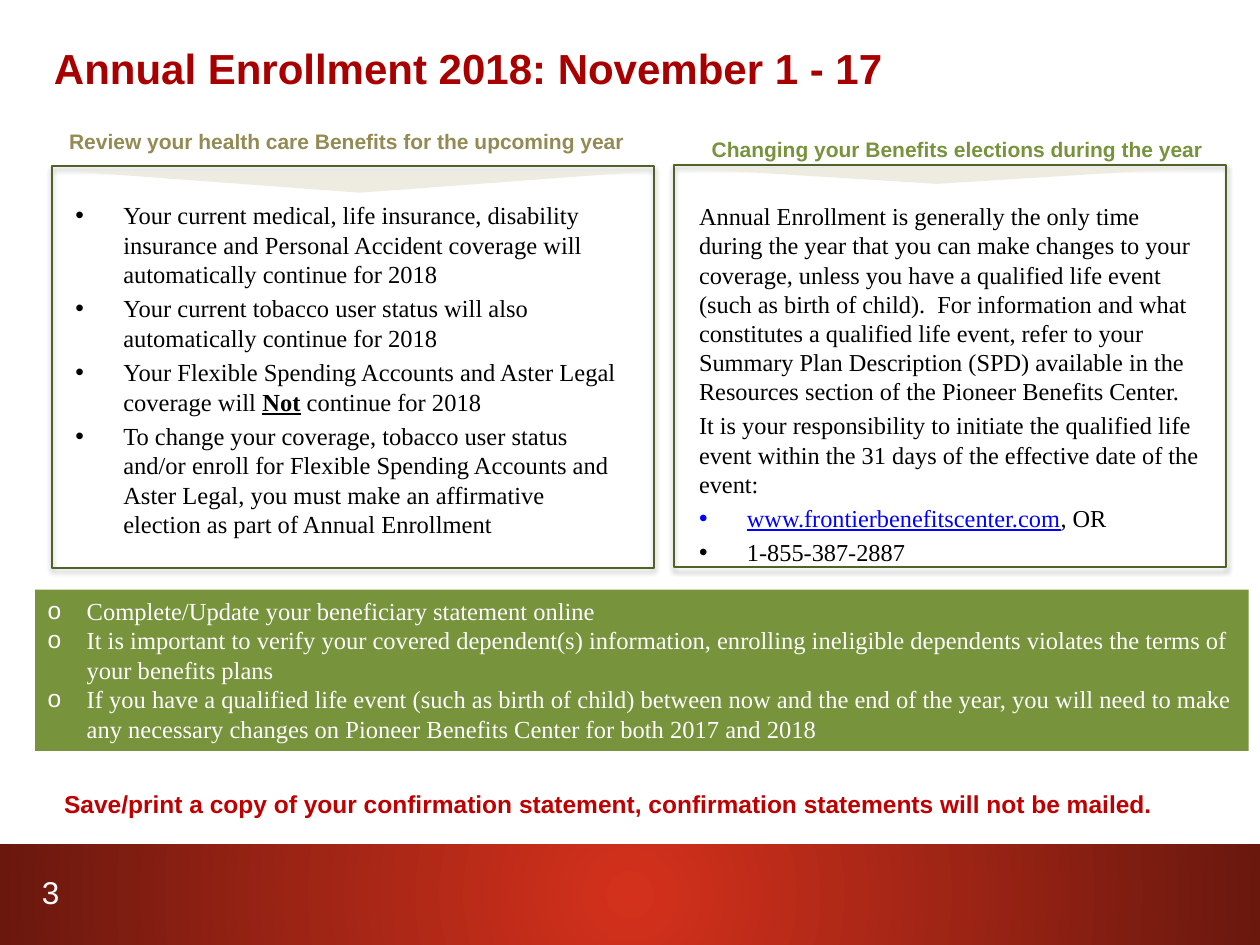
from lxml.etree import SubElement
from pptx import Presentation
from pptx.dml.color import RGBColor
from pptx.enum.shapes import MSO_SHAPE
from pptx.enum.text import MSO_ANCHOR, PP_ALIGN
from pptx.oxml import parse_xml
from pptx.oxml.ns import nsdecls, qn
from pptx.util import Inches, Pt

TITLE_RED = RGBColor(0xA8, 0x00, 0x00)
NOTICE_RED = RGBColor(0xC0, 0x00, 0x00)
TAN = RGBColor(0x94, 0x8A, 0x54)
GREEN = RGBColor(0x77, 0x93, 0x3C)
DARK_GREEN = RGBColor(0x4F, 0x62, 0x28)
CREAM = RGBColor(0xEE, 0xEC, 0xE1)
BLUE = RGBColor(0x00, 0x00, 0xFF)
BLACK = RGBColor(0x00, 0x00, 0x00)
WHITE = RGBColor(0xFF, 0xFF, 0xFF)
FOOTER_GRADIENT = f"""<a:gradFill {nsdecls('a')} rotWithShape="1"><a:gsLst>
<a:gs pos="0"><a:srgbClr val="D4311C"/></a:gs><a:gs pos="100000"><a:srgbClr val="6A180E"/></a:gs>
</a:gsLst><a:path path="circle"><a:fillToRect l="50000" t="50000" r="50000" b="50000"/></a:path></a:gradFill>"""
PANEL_SHADOW = f"""<a:effectLst {nsdecls('a')}><a:outerShdw blurRad="40000" dist="23000" dir="5400000" rotWithShape="0">
<a:srgbClr val="000000"><a:alpha val="35000"/></a:srgbClr></a:outerShdw></a:effectLst>"""


def add_block(shapes, kind, left, top, width, height):
    block = shapes.add_shape(kind, Inches(left), Inches(top), Inches(width), Inches(height))
    block.shadow.inherit = False
    block.line.fill.background()
    return block


def write(frame, paragraphs, font_name, size, color, bold=False, bullet=None, indent=0, gap=0):
    frame.text = "\n".join(paragraphs)
    for index, paragraph in enumerate(frame.paragraphs):
        paragraph.alignment = PP_ALIGN.LEFT
        paragraph.space_before = Pt(gap if index else 0)
        if bullet and index >= bullet[1]:
            properties = paragraph._p.get_or_add_pPr()
            properties.set("marL", str(Inches(indent)))
            properties.set("indent", str(-Inches(indent)))
            SubElement(properties, qn("a:buFont"), typeface="Arial")
            SubElement(properties, qn("a:buChar"), char=bullet[0])
        for run in paragraph.runs:
            run.font.name = font_name
            run.font.size = Pt(size)
            run.font.bold = bold
            run.font.color.rgb = color


presentation = Presentation()
presentation.slide_width = Inches(10)
presentation.slide_height = Inches(7.5)
slide = presentation.slides.add_slide(presentation.slide_layouts[6])
shapes = slide.shapes

footer = add_block(shapes, MSO_SHAPE.RECTANGLE, 0, 6.7, 10, 0.8)
footer.fill.background()
footer_properties = footer._element.spPr
footer_properties.replace(footer_properties.find(qn("a:noFill")), parse_xml(FOOTER_GRADIENT))

panels = [
    ((0.41, 1.32, 4.78, 3.19), (2.77, -0.85, 0.17, 4.59)),
    ((5.35, 1.31, 4.38, 3.19), (7.37, -0.69, 0.13, 4.17)),
]
for panel_box, pointer_box in panels:
    panel = add_block(shapes, MSO_SHAPE.RECTANGLE, *panel_box)
    panel.fill.background()
    panel.line.color.rgb = DARK_GREEN
    panel.line.width = Pt(1)
    panel_properties = panel._element.spPr
    panel_properties.replace(panel_properties.find(qn("a:effectLst")), parse_xml(PANEL_SHADOW))
    pointer = add_block(shapes, MSO_SHAPE.PENTAGON, *pointer_box)
    pointer.adjustments[0] = 1
    pointer.rotation = 90
    pointer.fill.solid()
    pointer.fill.fore_color.rgb = CREAM

labels = [
    ("Annual Enrollment 2018: November 1 - 17", (0.33, 0.14, 9, 0.79), 24, TITLE_RED, True, True),
    ("Review your health care Benefits for the upcoming year", (0.45, 0.92, 4.71, 0.4), 12, TAN, True, True),
    ("Changing your Benefits elections during the year", (5.55, 1.03, 4.19, 0.3), 12, GREEN, True, False),
    ("Save/print a copy of your confirmation statement, confirmation statements will not be mailed.",
     (0.41, 6.21, 8.88, 0.34), 14, NOTICE_RED, True, False),
    ("3", (0.16, 6.88, 0.41, 0.4), 18, WHITE, False, True),
]
for text, box, size, color, bold, wraps in labels:
    label = shapes.add_textbox(*map(Inches, box)).text_frame
    label.word_wrap = wraps
    label.vertical_anchor = MSO_ANCHOR.MIDDLE
    write(label, [text], "Arial", size, color, bold)
label.paragraphs[0].alignment = PP_ALIGN.RIGHT

review = shapes.add_textbox(Inches(0.5), Inches(1.54), Inches(4.59), Inches(2.91)).text_frame
review.word_wrap = True
write(review, [
    "Your current medical, life insurance, disability insurance and Personal Accident coverage will "
    "automatically continue for 2018",
    "Your current tobacco user status will also automatically continue for 2018",
    "Your Flexible Spending Accounts and Aster Legal coverage will ",
    "To change your coverage, tobacco user status and/or enroll for Flexible Spending Accounts and "
    "Aster Legal, you must make an affirmative election as part of Annual Enrollment",
], "Times New Roman", 14, BLACK, bullet=("•", 0), indent=0.38, gap=2.8)

changes = shapes.add_textbox(Inches(5.45), Inches(1.55), Inches(4.17), Inches(2.91)).text_frame
changes.word_wrap = True
write(changes, [
    "Annual Enrollment is generally the only time during the year that you can make changes to your "
    "coverage, unless you have a qualified life event (such as birth of child).  For information and "
    "what constitutes a qualified life event, refer to your Summary Plan Description (SPD) available "
    "in the Resources section of the Pioneer Benefits Center.",
    "It is your responsibility to initiate the qualified life event within the 31 days of the "
    "effective date of the event:",
    "www.frontierbenefitscenter.com",
    "1-855-387-2887",
], "Times New Roman", 13.9, BLACK, bullet=("•", 2), indent=0.38, gap=2.8)
address = changes.paragraphs[2].runs[0]
address.font.color.rgb = BLUE
address.font.underline = True

additions = [
    (review.paragraphs[2], "Not", 14, True),
    (review.paragraphs[2], " continue for 2018", 14, False),
    (changes.paragraphs[2], ", OR", 13.9, False),
]
for paragraph, text, size, emphasized in additions:
    run = paragraph.add_run()
    run.text = text
    run.font.name = "Times New Roman"
    run.font.size = Pt(size)
    run.font.color.rgb = BLACK
    run.font.bold = emphasized
    run.font.underline = emphasized

reminders = add_block(shapes, MSO_SHAPE.RECTANGLE, 0.28, 4.68, 9.63, 1.28)
reminders.fill.solid()
reminders.fill.fore_color.rgb = GREEN
reminders.text_frame.word_wrap = True
reminders.text_frame.vertical_anchor = MSO_ANCHOR.TOP
write(reminders.text_frame, [
    "Complete/Update your beneficiary statement online",
    "It is important to verify your covered dependent(s) information, enrolling ineligible dependents "
    "violates the terms of your benefits plans",
    "If you have a qualified life event (such as birth of child) between now and the end of the year, "
    "you will need to make any necessary changes on Pioneer Benefits Center for both 2017 and 2018",
], "Times New Roman", 14, WHITE, bullet=("o", 0), indent=0.31)

presentation.save("out.pptx")
